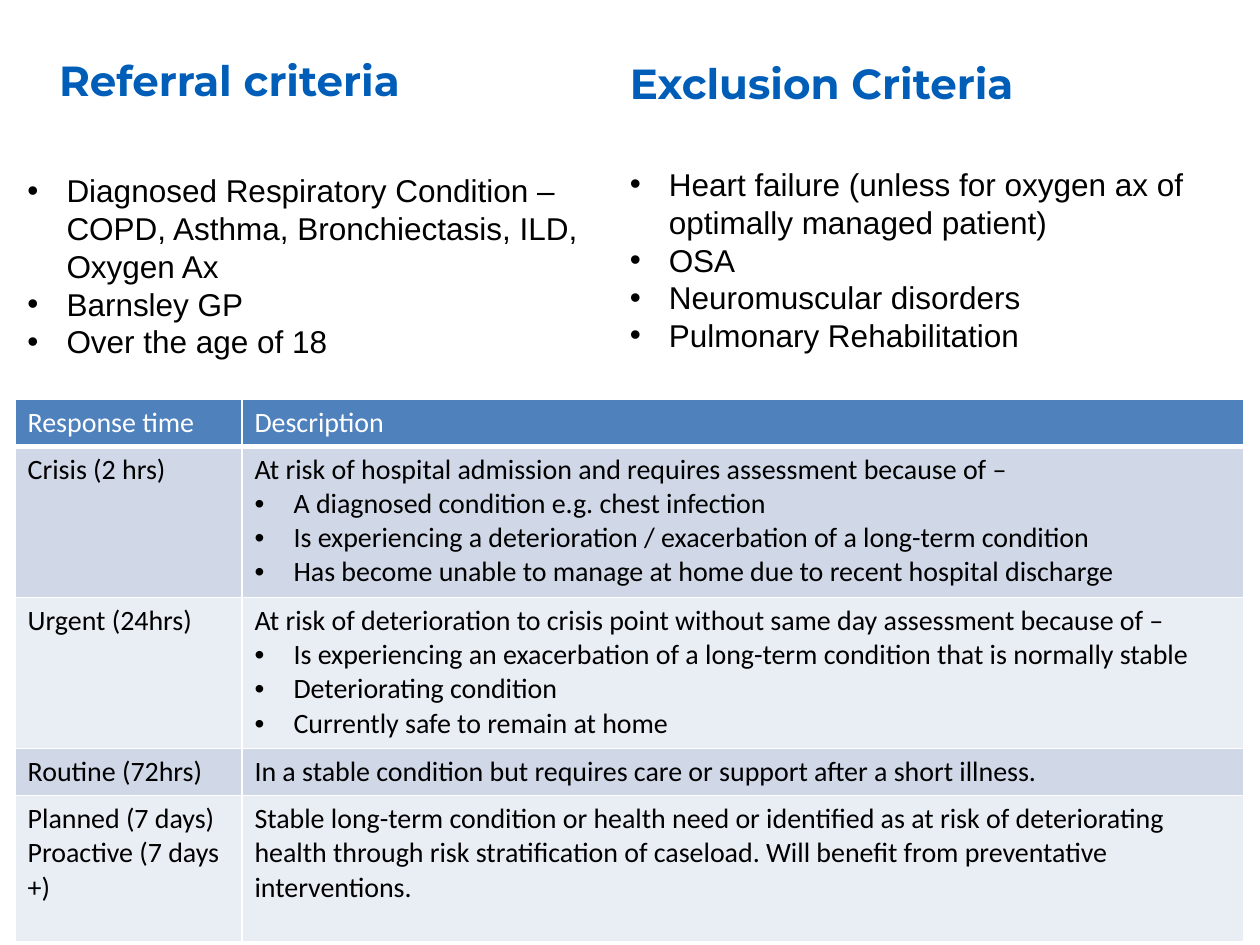
from lxml.etree import SubElement
from pptx import Presentation
from pptx.dml.color import RGBColor
from pptx.enum.shapes import MSO_SHAPE
from pptx.enum.text import MSO_ANCHOR, PP_ALIGN
from pptx.oxml.ns import qn
from pptx.util import Inches, Pt

COLORS = {
    "white": "FFFFFF",
    "black": "000000",
    "heading": "005EB8",
    "header_row": "4F81BD",
    "odd_row": "D0D8E8",
    "even_row": "E9EDF4",
}

REFERRAL = [
    "• Diagnosed Respiratory Condition – COPD, Asthma, Bronchiectasis, ILD, Oxygen Ax",
    "• Barnsley GP",
    "• Over the age of 18",
]
EXCLUSION = [
    "• Heart failure (unless for oxygen ax of optimally managed patient)",
    "• OSA",
    "• Neuromuscular disorders",
    "• Pulmonary Rehabilitation",
]

# Each row: height, response time lines, description lines
RESPONSES = [
    (0.37, ["Response time"], ["Description"]),
    (1.2, ["Crisis (2 hrs)"], [
        "At risk of hospital admission and requires assessment because of –",
        "• A diagnosed condition e.g. chest infection",
        "• Is experiencing a deterioration / exacerbation of a long-term condition",
        "• Has become unable to manage at home due to recent hospital discharge",
    ]),
    (1.2, ["Urgent (24hrs)"], [
        "At risk of deterioration to crisis point without same day assessment because of –",
        "• Is experiencing an exacerbation of a long-term condition that is normally stable",
        "• Deteriorating condition",
        "• Currently safe to remain at home",
    ]),
    (0.37, ["Routine (72hrs)"],
     ["In a stable condition but requires care or support after a short illness."]),
    (1.16, ["Planned (7 days)", "Proactive (7 days +)"], [
        "Stable long-term condition or health need or identified as at risk of "
        "deteriorating health through risk stratification of caseload. "
        "Will benefit from preventative interventions.",
    ]),
]


def rgb(name):
    return RGBColor.from_string(COLORS[name])


def add_bullet(paragraph):
    props = paragraph._p.get_or_add_pPr()
    props.set("marL", str(Inches(0.31)))
    props.set("indent", str(-Inches(0.31)))
    SubElement(props, qn("a:buFont")).set("typeface", "Arial")
    SubElement(props, qn("a:buChar")).set("char", "•")


def write_text(frame, lines, *, size, font, color="black", bold=False):
    """Fill a text frame; lines that start with a bullet become list items."""
    frame.word_wrap = True
    for index, line in enumerate(lines):
        paragraph = frame.add_paragraph() if index else frame.paragraphs[0]
        paragraph.alignment = PP_ALIGN.LEFT
        if line.startswith("• "):
            add_bullet(paragraph)
        run = paragraph.add_run()
        run.text = line.removeprefix("• ")
        run.font.size = Pt(size)
        run.font.name = font
        run.font.bold = bold
        run.font.color.rgb = rgb(color)


def add_text_box(slide, box, lines, **text_format):
    frame = slide.shapes.add_textbox(*map(Inches, box)).text_frame
    write_text(frame, lines, **text_format)


def add_panel(slide, box, lines, anchor, **text_format):
    panel = slide.shapes.add_shape(MSO_SHAPE.RECTANGLE, *map(Inches, box))
    panel.shadow.inherit = False
    panel.fill.solid()
    panel.fill.fore_color.rgb = rgb("white")
    panel.line.fill.background()
    panel.text_frame.vertical_anchor = anchor
    write_text(panel.text_frame, lines, **text_format)


def add_borders(cell, bottom):
    props = cell._tc.get_or_add_tcPr()
    for side, width in (("L", 1), ("R", 1), ("T", 1), ("B", bottom)):
        line = SubElement(props, qn(f"a:ln{side}"), w=str(Pt(width)))
        fill = SubElement(line, qn("a:solidFill"))
        SubElement(fill, qn("a:srgbClr"), val=COLORS["white"])


def add_response_table(slide):
    widths = (1.8, 7.95)
    height = sum(row[0] for row in RESPONSES)
    table = slide.shapes.add_table(
        len(RESPONSES), len(widths),
        Inches(0.12), Inches(3.17), Inches(sum(widths)), Inches(height)).table
    for column, width in zip(table.columns, widths):
        column.width = Inches(width)
    for index, (row_height, *texts) in enumerate(RESPONSES):
        table.rows[index].height = Inches(row_height)
        is_header = index == 0
        band = "header_row" if is_header else "odd_row" if index % 2 else "even_row"
        for cell, lines in zip(table.rows[index].cells, texts):
            add_borders(cell, bottom=3 if is_header else 1)
            cell.fill.solid()
            cell.fill.fore_color.rgb = rgb(band)
            write_text(cell.text_frame, lines, size=16, font="Calibri",
                       color="white" if is_header else "black")


def main():
    presentation = Presentation()
    presentation.slide_width = Inches(10)
    presentation.slide_height = Inches(7.5)
    slide = presentation.slides.add_slide(presentation.slide_layouts[6])

    # Response times
    add_response_table(slide)

    # Criteria lists
    body = {"size": 18, "font": "Arial"}
    add_text_box(slide, (0.12, 1.31, 4.67, 1.92), REFERRAL, **body)
    add_panel(slide, (4.9, 1.26, 5.4, 1.62), EXCLUSION, MSO_ANCHOR.TOP, **body)

    # Headings
    heading = {"size": 24, "font": "Montserrat", "color": "heading", "bold": True}
    add_text_box(slide, (0.37, 0.38, 5.15, 0.5), ["Referral criteria"], **heading)
    add_panel(slide, (4.9, 0, 5.77, 1.31), ["Exclusion Criteria"],
              MSO_ANCHOR.MIDDLE, **heading)

    presentation.save("out.pptx")


if __name__ == "__main__":
    main()
